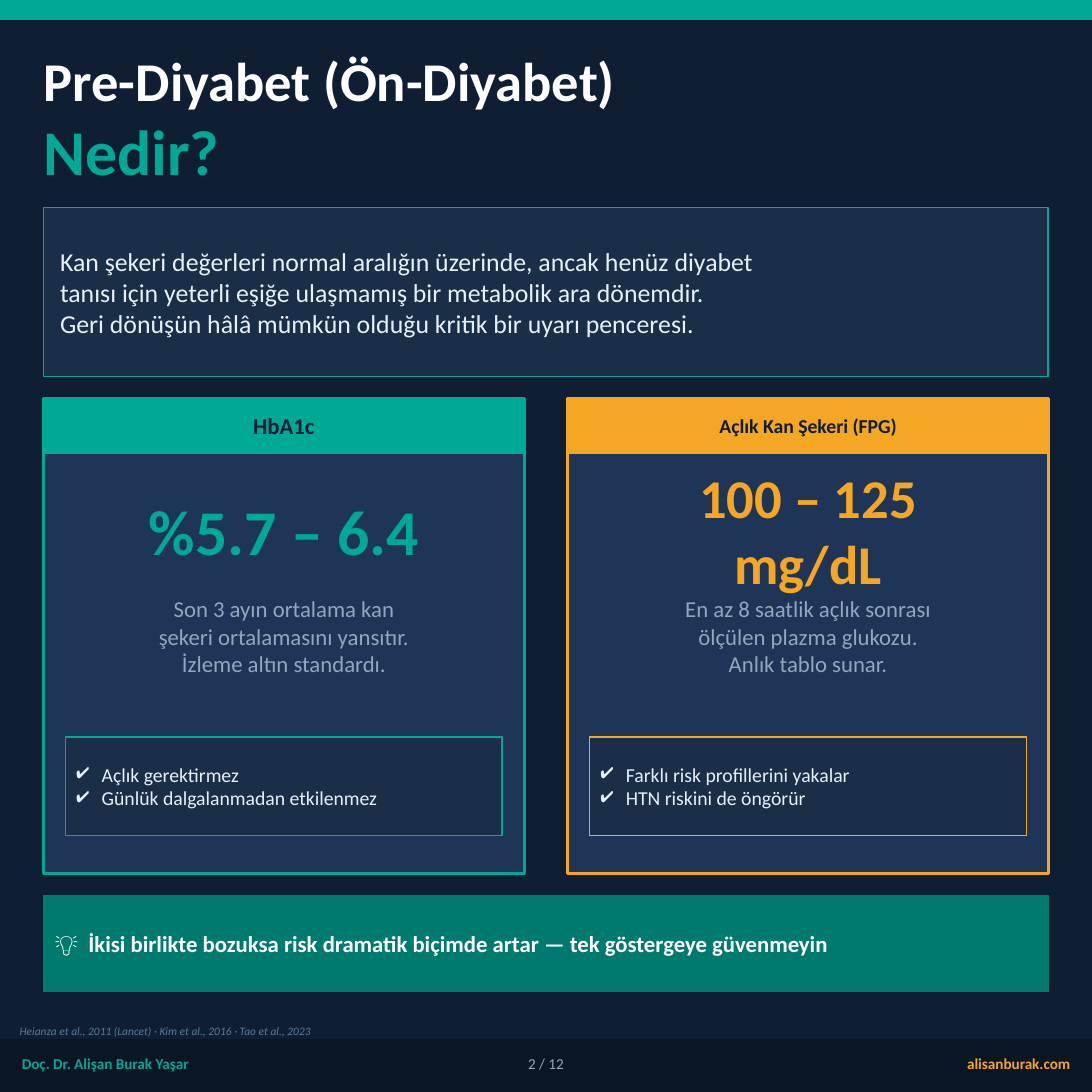
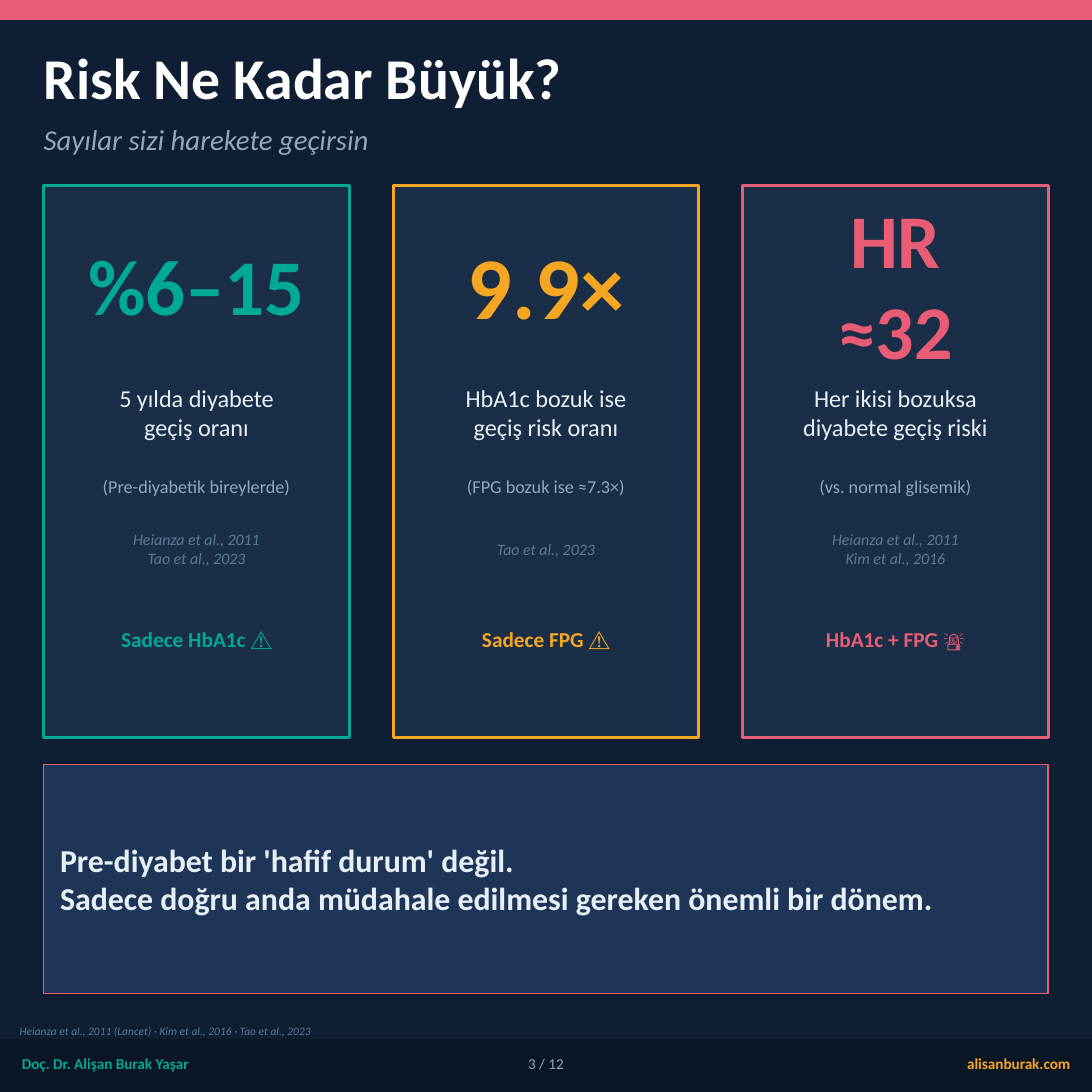
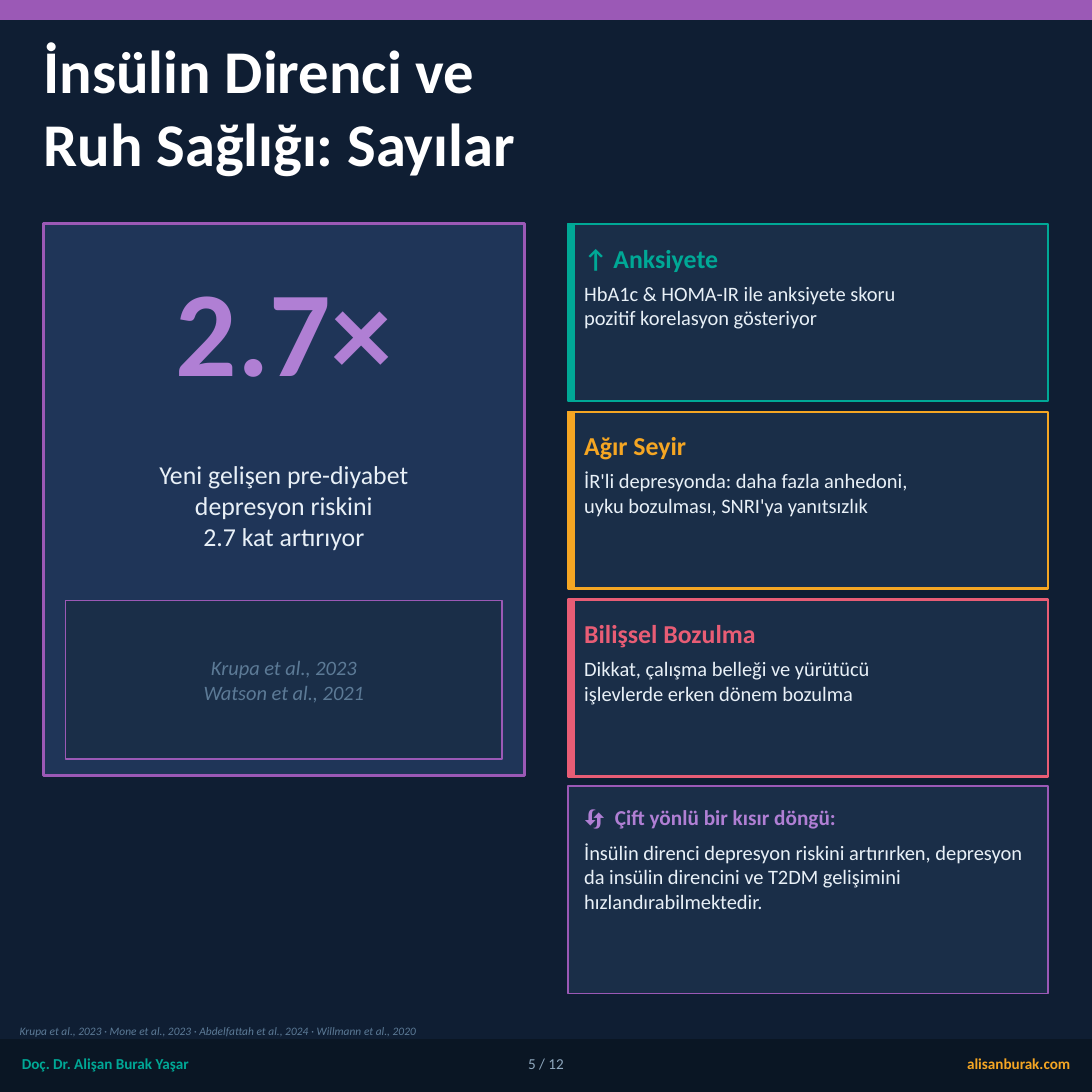
import pptx
import pptx.util
import pptx.dml.color
import pptx.enum.shapes
import pptx.enum.text
import pptx.oxml.ns
import lxml.etree

Pt = pptx.util.Pt
ALIGN = {
    "left": pptx.enum.text.PP_ALIGN.LEFT,
    "mid": pptx.enum.text.PP_ALIGN.CENTER,
    "right": pptx.enum.text.PP_ALIGN.RIGHT,
}
HUES = {
    "back": "0F1E33", "foot": "0A1624", "panel": "1A2E48", "card": "1F3558",
    "teal": "00A896", "deep": "007A6E", "gold": "F5A623", "rose": "E85D75",
    "plum": "9B59B6", "lilac": "B07FD4", "white": "FFFFFF", "pale": "E8F0F7",
    "mist": "8FA8BE", "slate": "5C7A96",
}
FONT = "Calibri"
SIDE = 720
EDGE = 28.8
FULL = SIDE - 2 * EDGE
HALF = 316.8
RIGHT = SIDE - EDGE - HALF
SOURCE = "Heianza et al., 2011 (Lancet) · Kim et al., 2016 · Tao et al., 2023"


def tint(name):
    return pptx.dml.color.RGBColor.from_string(HUES[name])


def within(box, x, y, wide, high):
    return box[0] + x, box[1] + y, wide, high


def rect(slide, box, fill, line=None, width=1):
    shape = slide.shapes.add_shape(
        pptx.enum.shapes.MSO_SHAPE.RECTANGLE, *[Pt(n) for n in box])
    shape.shadow.inherit = False
    shape.fill.solid()
    shape.fill.fore_color.rgb = tint(fill)
    shape.line.color.rgb = tint(line or fill)
    shape.line.width = Pt(width)


def mark(para, sign, indent):
    props = para._p.get_or_add_pPr()
    props.set("marL", str(Pt(indent)))
    props.set("indent", str(-Pt(indent)))
    item = lxml.etree.SubElement(props, pptx.oxml.ns.qn("a:buChar"))
    item.set("char", sign)


def stop(para, place):
    props = para._p.get_or_add_pPr()
    tabs = lxml.etree.SubElement(props, pptx.oxml.ns.qn("a:tabLst"))
    tab = lxml.etree.SubElement(tabs, pptx.oxml.ns.qn("a:tab"))
    tab.set("pos", str(Pt(place)))
    tab.set("algn", "l")


def text(slide, box, words, size, hue, bold=False, slant=False,
         align="left", top=False, sign=None, tab=None):
    frame = slide.shapes.add_textbox(*[Pt(n) for n in box]).text_frame
    frame.word_wrap = True
    frame.margin_left = frame.margin_right = 0
    frame.margin_top = frame.margin_bottom = 0
    anchor = pptx.enum.text.MSO_ANCHOR
    frame.vertical_anchor = anchor.TOP if top else anchor.MIDDLE
    for spot, line in enumerate(words.split("\n")):
        para = frame.add_paragraph() if spot else frame.paragraphs[0]
        para.alignment = ALIGN[align]
        if sign:
            mark(para, sign, 16.7)
        if tab:
            stop(para, tab)
        run = para.add_run()
        run.text = line
        font = run.font
        font.name = FONT
        font.size = Pt(size)
        font.color.rgb = tint(hue)
        font.bold = bold
        font.italic = slant


def start(deck, hue):
    slide = deck.slides.add_slide(deck.slide_layouts[6])
    slide.background.fill.solid()
    slide.background.fill.fore_color.rgb = tint("back")
    rect(slide, (0, 0, SIDE, 12.96), hue)
    return slide


def title(slide, box, words, size, hue="white", **form):
    text(slide, box, words, size, hue, bold=True, **form)


def footer(slide, page, source):
    box = (0, 685.44, SIDE, 34.56)
    rect(slide, box, "foot")
    text(slide, within(box, 14.4, 1.44, 288, 28.8),
         "Doç. Dr. Alişan Burak Yaşar", 10, "teal", bold=True)
    text(slide, within(box, 12.96, -12.96, 691.2, 14.4), source, 7.5,
         "slate", slant=True)
    text(slide, within(box, 468, 1.44, 237.6, 28.8), "alisanburak.com", 10,
         "gold", bold=True, align="right")
    text(slide, within(box, 309.6, 1.44, 100.8, 28.8), f"{page} / 12", 10,
         "mist", align="mid")


def metric(slide, box, hue, head, small, value, size, note, points):
    wide = box[2]
    rect(slide, box, "card", hue, 2)
    band = within(box, 0, 0, wide, 36)
    rect(slide, band, hue)
    text(slide, band, head, small, "back", bold=True, align="mid")
    text(slide, within(box, 0, 46.8, wide, 79.2), value, size, hue,
         bold=True, align="mid")
    text(slide, within(box, 7.2, 129.6, wide - 14.4, 79.2), note, 15,
         "mist", align="mid", top=True)
    rect(slide, within(box, 14.4, 223.2, wide - 28.8, 64.8), "panel", hue)
    text(slide, within(box, 21.6, 223.2, wide - 43.2, 64.8), points, 13,
         "pale", sign="✔")


def risk(slide, box, hue, value, size, label, note, source, tag):
    rect(slide, box, "panel", hue, 2)
    rows = [
        (108, value, size, hue, True, False),
        (61.2, label, 16, "pale", False, False),
        (36, note, 12, "mist", False, False),
        (46.8, source, 10.5, "slate", False, True),
        (72, tag, 14, hue, True, False),
    ]
    y = 10.8
    for high, words, points, shade, bold, slant in rows:
        text(slide, within(box, 0, y, box[2], high), words, points, shade,
             bold=bold, slant=slant, align="mid")
        y += high


def figure(slide, box):
    wide = box[2]
    rect(slide, box, "card", "plum", 2)
    text(slide, within(box, 0, 7.2, wide, 122.4), "2.7×", 80, "lilac",
         bold=True, align="mid")
    text(slide, within(box, 7.2, 129.6, wide - 14.4, 111.6),
         "Yeni gelişen pre-diyabet\ndepresyon riskini\n2.7 kat artırıyor",
         17, "pale", align="mid")
    cite = within(box, 14.4, 248.4, wide - 28.8, 104.4)
    rect(slide, cite, "panel", "plum")
    text(slide, cite, "Krupa et al., 2023\nWatson et al., 2021", 13.5,
         "slate", slant=True, align="mid")


def finding(slide, box, hue, head, body, size=17, shade=None, width=1.5,
            top=7.2, strip=True, tab=None):
    rect(slide, box, "panel", hue, width)
    if strip:
        rect(slide, within(box, 0, 0, 4.32, box[3]), hue)
    wide = box[2] - 14.4
    text(slide, within(box, 10.8, top, wide, 30.24), head, size,
         shade or hue, bold=True, tab=tab)
    y = top + 30.24
    text(slide, within(box, 10.8, y, wide, box[3] - y - 4), body, 13.5,
         "pale", top=True)


def define(deck):
    slide = start(deck, "teal")
    title(slide, (EDGE, 25.2, FULL, 54), "Pre-Diyabet (Ön-Diyabet)", 36)
    title(slide, (EDGE, 75.6, FULL, 46.8), "Nedir?", 42, "teal")
    intro = (EDGE, 136.8, FULL, 111.6)
    rect(slide, intro, "panel", "teal")
    text(slide, within(intro, 10.8, 3.6, 640.8, 104.4),
         "Kan şekeri değerleri normal aralığın üzerinde, ancak henüz diyabet\n"
         "tanısı için yeterli eşiğe ulaşmamış bir metabolik ara dönemdir.\n"
         "Geri dönüşün hâlâ mümkün olduğu kritik bir uyarı penceresi.",
         17, "pale")
    metric(slide, (EDGE, 262.8, HALF, 313.2), "teal", "HbA1c", 15,
           "%5.7 – 6.4", 42,
           "Son 3 ayın ortalama kan\nşekeri ortalamasını yansıtır.\n"
           "İzleme altın standardı.",
           "Açlık gerektirmez\nGünlük dalgalanmadan etkilenmez")
    metric(slide, (RIGHT, 262.8, HALF, 313.2), "gold",
           "Açlık Kan Şekeri (FPG)", 13, "100 – 125\nmg/dL", 36,
           "En az 8 saatlik açlık sonrası\nölçülen plazma glukozu.\n"
           "Anlık tablo sunar.",
           "Farklı risk profillerini yakalar\nHTN riskini de öngörür")
    call = (EDGE, 590.4, FULL, 63.36)
    rect(slide, call, "deep")
    text(slide, within(call, 7.2, 0, 648, call[3]),
         "💡\tİkisi birlikte bozuksa risk dramatik biçimde artar — "
         "tek göstergeye güvenmeyin", 15, "white", bold=True, tab=22.3)
    footer(slide, 2, SOURCE)


def compare(deck):
    slide = start(deck, "rose")
    title(slide, (EDGE, 25.2, FULL, 50.4), "Risk Ne Kadar Büyük?", 38)
    text(slide, (EDGE, 75.6, FULL, 32.4), "Sayılar sizi harekete geçirsin",
         19, "mist", slant=True)
    cards = [
        ("teal", "%6–15", 52, "5 yılda diyabete\ngeçiş oranı",
         "(Pre-diyabetik bireylerde)",
         "Heianza et al., 2011\nTao et al., 2023", "Sadece HbA1c ⚠️"),
        ("gold", "9.9×", 58, "HbA1c bozuk ise\ngeçiş risk oranı",
         "(FPG bozuk ise ≈7.3×)", "Tao et al., 2023", "Sadece FPG ⚠️"),
        ("rose", "HR\n≈32", 50, "Her ikisi bozuksa\ndiyabete geçiş riski",
         "(vs. normal glisemik)",
         "Heianza et al., 2011\nKim et al., 2016", "HbA1c + FPG 🚨"),
    ]
    gap = 50.4 - 21.6
    wide = (FULL - 2 * gap) / 3
    for spot, card in enumerate(cards):
        x = EDGE + spot * (wide + gap)
        risk(slide, (x, 122.4, wide, 363.6), *card)
    note = (EDGE, 504, FULL, 151.2)
    rect(slide, note, "card", "rose")
    text(slide, within(note, 10.8, 7.2, 648, 136.8),
         "Pre-diyabet bir 'hafif durum' değil.\n"
         "Sadece doğru anda müdahale edilmesi gereken önemli bir dönem.",
         21, "pale", bold=True)
    footer(slide, 3, SOURCE)


def relate(deck):
    slide = start(deck, "plum")
    title(slide, (EDGE, 21.6, FULL, 108),
          "İnsülin Direnci ve\nRuh Sağlığı: Sayılar", 40, top=True)
    figure(slide, (EDGE, 147.6, HALF, 363.6))
    rows = [
        ("teal", "↑ Anksiyete",
         "HbA1c & HOMA-IR ile anksiyete skoru\npozitif korelasyon gösteriyor"),
        ("gold", "Ağır Seyir",
         "İR'li depresyonda: daha fazla anhedoni,\n"
         "uyku bozulması, SNRI'ya yanıtsızlık"),
        ("rose", "Bilişsel Bozulma",
         "Dikkat, çalışma belleği ve yürütücü\nişlevlerde erken dönem bozulma"),
    ]
    high = 116.64
    for spot, row in enumerate(rows):
        y = 147.6 + spot * (high + 7.2)
        finding(slide, (RIGHT, y, HALF, high), *row)
    finding(slide, (RIGHT, 518.4, HALF, 136.8), "plum",
            "🔄\tÇift yönlü bir kısır döngü:",
            "İnsülin direnci depresyon riskini artırırken, depresyon da "
            "insülin direncini ve T2DM gelişimini hızlandırabilmektedir.",
            size=14, shade="lilac", width=1, top=5.04, strip=False, tab=20.2)
    footer(slide, 5, "Krupa et al., 2023 · Mone et al., 2023 · "
           "Abdelfattah et al., 2024 · Willmann et al., 2020")


def main():
    deck = pptx.Presentation()
    deck.slide_width = deck.slide_height = Pt(SIDE)
    define(deck)
    compare(deck)
    relate(deck)
    deck.save("out.pptx")


if __name__ == "__main__":
    main()
